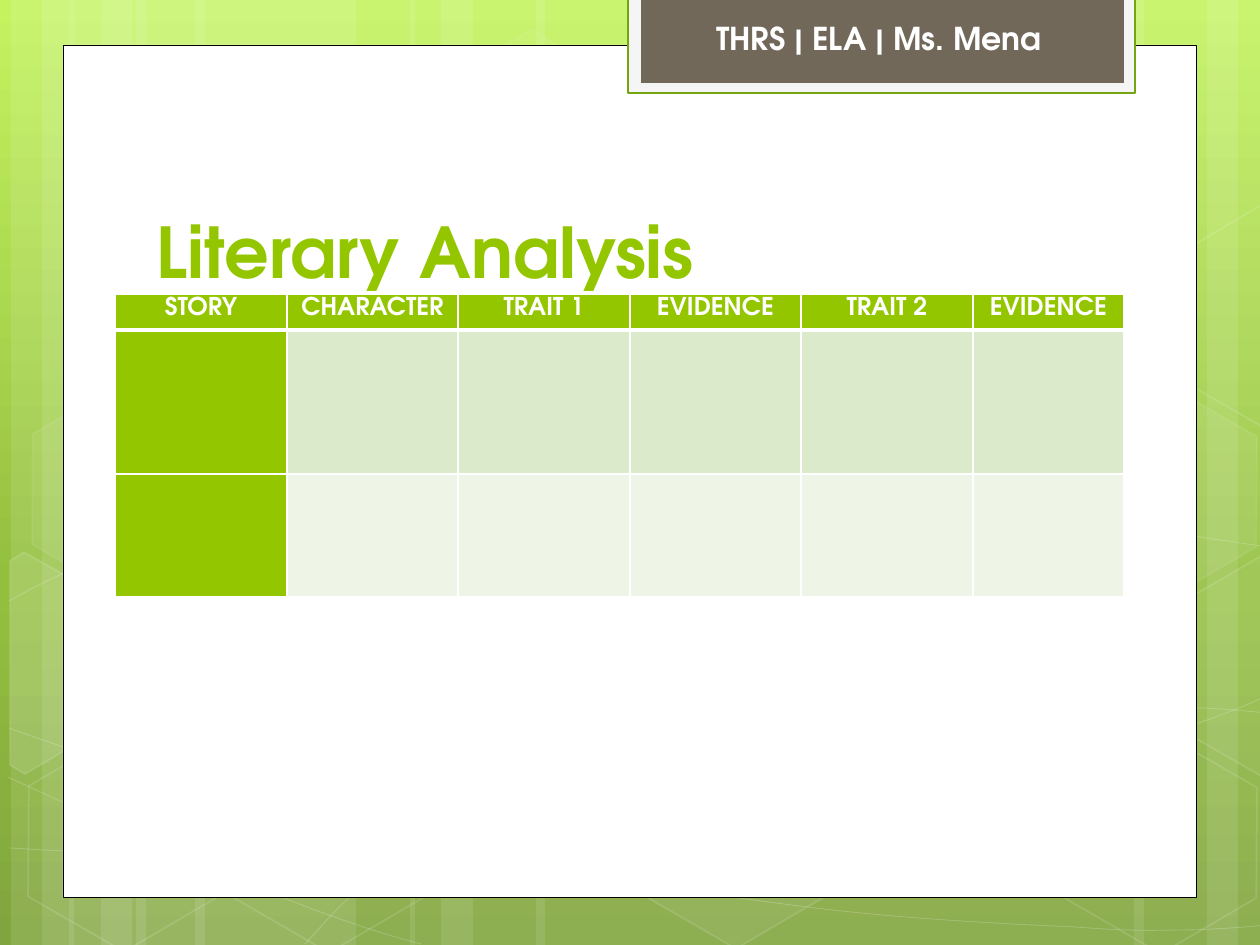
from copy import deepcopy
from dataclasses import dataclass
from typing import NamedTuple, Optional

from lxml.etree import SubElement
from pptx import Presentation
from pptx.dml.color import RGBColor
from pptx.enum.shapes import MSO_SHAPE as Preset
from pptx.enum.text import MSO_ANCHOR as Anchor, MSO_AUTO_SIZE as AutoSize, PP_ALIGN as Align
from pptx.oxml.ns import qn
from pptx.util import Emu, Pt

SCALE = 914400 / 126
SLIDE_WIDTH, SLIDE_HEIGHT = 1260, 945


@dataclass(frozen=True)
class Theme:
    font: str = "TeX Gyre Adventor"
    white: str = "FFFFFF"
    black: str = "000000"
    green: str = "94C600"
    tab_line: str = "74A510"
    tab_frame: str = "F5F5F5"
    tab: str = "71685A"
    bands: tuple = ("DCEACC", "EEF5E7")
    background: tuple = ((0, "C3F35F"), (0.62, "93BF3F"), (1, "81A53E"))
    title_size: int = 40
    tab_size: int = 18
    header_size: int = 14


class Box(NamedTuple):
    left: int
    top: int
    width: int
    height: int


class Paint(NamedTuple):
    """Fill and line of a shape; opacities are percentages."""
    fill: Optional[str] = None
    fill_opacity: int = 100
    line: Optional[str] = None
    line_opacity: int = 100
    line_width: float = 1


class Hexagon(NamedTuple):
    left: int
    top: int
    fill_opacity: int
    line_opacity: int


THEME = Theme()
STRIPES = ((136, 220), (11, 63), (42, 104), (195, 220), (69, 63), (101, 104),
           (924, 220), (1207, 63), (1134, 104), (536, 388), (410, 63), (441, 104))
# Each curve is a start point followed by three control points per Bezier segment.
CURVES = (
    ((9, 848), (77, 852), (145, 856), (239, 854), (334, 853), (451, 851), (577, 838),
     (703, 825), (882, 801), (998, 777), (1113, 753), (1231, 716), (1269, 694)),
    ((9, 601), (45, 581), (82, 562), (152, 543), (224, 524), (326, 496), (437, 488),
     (549, 479), (685, 478), (824, 488), (963, 498), (1193, 537), (1269, 547)),
    ((8, 777), (160, 847), (311, 916), (421, 944)),
    ((9, 728), (48, 742), (88, 756), (161, 776), (234, 795), (344, 827), (450, 848),
     (554, 869), (687, 892), (791, 905), (896, 919), (1008, 924), (1075, 927),
     (1140, 932), (1158, 930), (1191, 930), (1223, 929), (1246, 927), (1269, 925)),
    ((305, 944), (328, 919), (350, 893), (381, 871), (411, 848), (454, 822), (489, 805),
     (524, 789), (546, 780), (592, 767), (638, 754), (722, 737), (766, 728),
     (811, 719), (818, 719), (857, 717), (896, 713), (958, 709), (1000, 708),
     (1045, 707), (1116, 708), (1116, 708), (1144, 708), (1173, 708), (1201, 708),
     (1223, 709), (1245, 711), (1256, 712), (1264, 713), (1264, 712), (1268, 713)),
)
HEXAGONS = (Hexagon(421, 45, 4, 8), Hexagon(626, 742, 6, 12), Hexagon(14, 745, 0, 12),
            Hexagon(18, 393, 7, 8), Hexagon(219, 746, 0, 12), Hexagon(949, 571, 10, 12),
            Hexagon(1051, 747, 0, 12), Hexagon(1051, 396, 7, 8))
# Hexagons cut by the slide edge: fill opacity and outline.
CUT_HEXAGONS = (
    (10, ((10, 561), (24, 552), (121, 607), (120, 718), (25, 774), (10, 765))),
    (4, ((1167, 611), (1261, 556), (1271, 562), (1271, 772), (1263, 777), (1167, 722))),
    (0, ((1167, 261), (1261, 205), (1273, 212), (1271, 422), (1263, 427), (1167, 372))),
)
HEADERS = ("STORY", "CHARACTER", "TRAIT 1", "EVIDENCE", "TRAIT 2", "EVIDENCE")
COLUMN_WIDTHS = (172, 171, 172, 171, 172, 151)
ROW_HEIGHTS = (36, 144, 123)


def px(length: float) -> Emu:
    return Emu(round(length * SCALE))


def emu_box(box: Box) -> list:
    return [px(length) for length in box]


def set_opacity(parent, percent: int) -> None:
    if percent < 100:
        color = parent.find(qn("a:solidFill"))[0]
        SubElement(color, qn("a:alpha")).set("val", str(percent * 1000))


def apply_paint(shape, paint: Paint) -> None:
    shape.shadow.inherit = False
    properties = shape._element.spPr
    if paint.fill and paint.fill_opacity:
        shape.fill.solid()
        shape.fill.fore_color.rgb = RGBColor.from_string(paint.fill)
        set_opacity(properties, paint.fill_opacity)
    else:
        shape.fill.background()
    if paint.line:
        shape.line.color.rgb = RGBColor.from_string(paint.line)
        shape.line.width = Pt(paint.line_width)
        set_opacity(properties.find(qn("a:ln")), paint.line_opacity)
    else:
        shape.line.fill.background()


def add_preset(slide, preset, box: Box, paint: Paint):
    shape = slide.shapes.add_shape(preset, *emu_box(box))
    apply_paint(shape, paint)
    return shape


def add_outline(slide, points, paint: Paint, close: bool):
    builder = slide.shapes.build_freeform(*points[0], scale=SCALE)
    builder.add_line_segments(points[1:], close=close)
    shape = builder.convert_to_shape()
    apply_paint(shape, paint)
    return shape


def add_curve(slide, controls, paint: Paint) -> None:
    """Draw the control points as an outline, then join each three into a Bezier segment."""
    shape = add_outline(slide, controls, paint, close=False)
    outline = next(shape._element.iter(qn("a:path")))
    lines = outline.findall(qn("a:lnTo"))
    for first in range(0, len(lines), 3):
        segment = SubElement(outline, qn("a:cubicBezTo"))
        for line in lines[first:first + 3]:
            segment.append(line[0])
            outline.remove(line)


def write_text(frame, text: str, size: int, color: str, align) -> None:
    frame.text = text
    paragraph = frame.paragraphs[0]
    paragraph.alignment = align
    font = paragraph.runs[0].font
    font.name, font.size, font.bold = THEME.font, Pt(size), True
    font.color.rgb = RGBColor.from_string(color)


def paint_background(slide) -> None:
    fill = slide.background.fill
    fill.gradient()
    fill.gradient_angle = 270
    stop_list = next(slide._element.iter(qn("a:gsLst")))
    stop_list.append(deepcopy(stop_list[-1]))
    for stop, (position, color) in zip(fill.gradient_stops, THEME.background):
        stop.position = position
        stop.color.rgb = RGBColor.from_string(color)


def add_decoration(slide) -> None:
    white = THEME.white
    for left, width in STRIPES:
        add_preset(slide, Preset.RECTANGLE, Box(left, 0, width, SLIDE_HEIGHT), Paint(white, 10))
    for curve in CURVES:
        add_curve(slide, curve, Paint(None, 0, white, 20, 0.5))
    for left, top, fill_opacity, line_opacity in HEXAGONS:
        hexagon = add_preset(slide, Preset.HEXAGON, Box(left, top, 220, 192),
                             Paint(white, fill_opacity, white, line_opacity))
        hexagon.adjustments[0] = 0.285
        hexagon.rotation = 30
    for fill_opacity, points in CUT_HEXAGONS:
        add_outline(slide, points, Paint(white, fill_opacity, white, 12), close=True)


def set_header_borders(cell) -> None:
    properties = cell._tc.get_or_add_tcPr()
    sides = (("a:lnL", 1), ("a:lnR", 1), ("a:lnT", 1), ("a:lnB", 3))
    for index, (side, width) in enumerate(sides):
        line = SubElement(properties, qn(side), w=str(Pt(width)))
        SubElement(SubElement(line, qn("a:solidFill")), qn("a:srgbClr"), val=THEME.white)
        properties.insert(index, line)


def add_analysis_table(slide) -> None:
    box = Box(115, 294, sum(COLUMN_WIDTHS), sum(ROW_HEIGHTS))
    table = slide.shapes.add_table(len(ROW_HEIGHTS), len(HEADERS), *emu_box(box)).table
    table.first_col = True
    for column, width in zip(table.columns, COLUMN_WIDTHS):
        column.width = px(width)
    for row_index, height in enumerate(ROW_HEIGHTS):
        table.rows[row_index].height = px(height)
        for column_index, header in enumerate(HEADERS):
            cell = table.cell(row_index, column_index)
            is_header = row_index == 0
            color = THEME.green if is_header or column_index == 0 else THEME.bands[row_index - 1]
            cell.fill.solid()
            cell.fill.fore_color.rgb = RGBColor.from_string(color)
            if is_header:
                set_header_borders(cell)
                cell.margin_left = cell.margin_right = px(9)
                cell.margin_top = cell.margin_bottom = 0
                write_text(cell.text_frame, header, THEME.header_size, THEME.white, Align.CENTER)
                cell.text_frame.paragraphs[0].line_spacing = 1.15


def add_title(slide) -> None:
    title = slide.shapes.title
    title.left, title.top, title.width, title.height = emu_box(Box(144, 141, 968, 158))
    frame = title.text_frame
    frame.auto_size, frame.vertical_anchor = AutoSize.NONE, Anchor.BOTTOM
    write_text(frame, "Literary Analysis", THEME.title_size, THEME.green, Align.LEFT)
    slide.shapes._spTree.append(title._element)  # bring in front of the white panel


def main() -> None:
    presentation = Presentation()
    presentation.slide_width, presentation.slide_height = px(SLIDE_WIDTH), px(SLIDE_HEIGHT)
    slide = presentation.slides.add_slide(presentation.slide_layouts[5])
    paint_background(slide)
    add_decoration(slide)
    for box, paint in (
        (Box(63, 45, 1134, 853), Paint(THEME.white, line=THEME.black, line_width=0.5)),
        (Box(628, -3, 507, 96), Paint(THEME.tab_frame, line=THEME.tab_line, line_width=1.25)),
        (Box(641, -3, 483, 86), Paint(THEME.tab)),
    ):
        add_preset(slide, Preset.RECTANGLE, box, paint)
    add_title(slide)
    add_analysis_table(slide)
    tab_text = slide.shapes.add_textbox(*emu_box(Box(651, 13, 456, 53))).text_frame
    tab_text.word_wrap = True
    write_text(tab_text, "THRS | ELA | Ms. Mena", THEME.tab_size, THEME.white, Align.CENTER)
    presentation.save("out.pptx")


if __name__ == "__main__":
    main()
